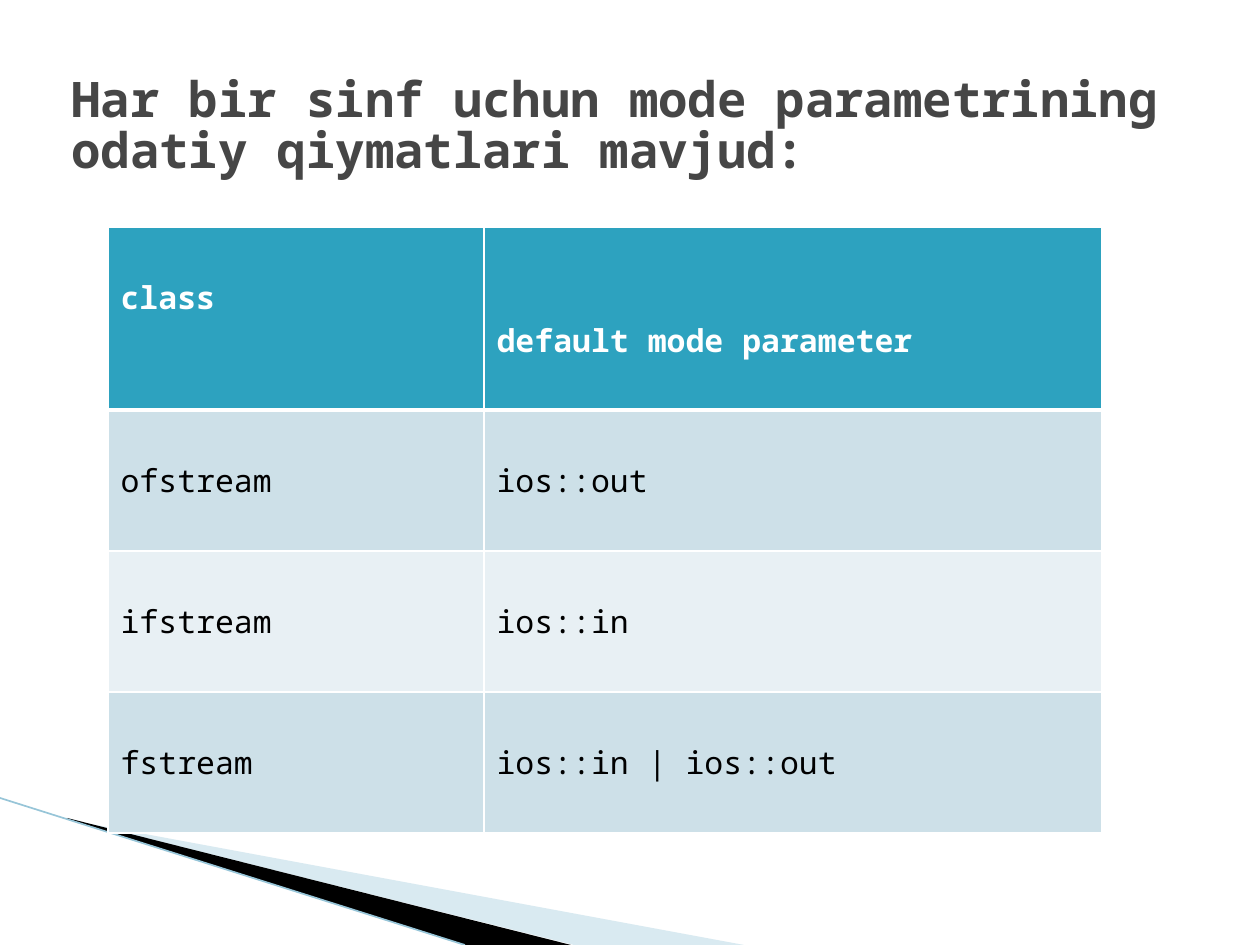
from lxml import etree
from pptx import Presentation
from pptx import util as u
from pptx.dml.color import RGBColor
from pptx.enum import shapes, text
from pptx.oxml import ns

FONT = "Noto Sans Mono"
SCALE = 914400 / 126
ROWS = [
    ("class", "default mode parameter"),
    ("ofstream", "ios::out"),
    ("ifstream", "ios::in"),
    ("fstream", "ios::in | ios::out"),
]


def px(length):
    return u.Emu(round(length * SCALE))


def color(value):
    return RGBColor.from_string(value)


def add_run(paragraph, words, size, fill, bold):
    run = paragraph.add_run()
    run.text = words
    run.font.name = FONT
    run.font.size = u.Pt(size)
    run.font.bold = bold
    run.font.color.rgb = color(fill)


def add_wedge(slide, left, top, points, fill, opacity=100):
    corners = [(px(left + x), px(top + y)) for x, y in points]
    builder = slide.shapes.build_freeform(*corners[0], scale=1.0)
    builder.add_line_segments(corners[1:], close=True)
    wedge = builder.convert_to_shape()
    wedge.shadow.inherit = False
    wedge.line.fill.background()
    wedge.fill.solid()
    wedge.fill.fore_color.rgb = color(fill)
    if opacity < 100:
        tone = wedge.fill._xPr.find(ns.qn("a:solidFill"))[0]
        etree.SubElement(tone, ns.qn("a:alpha"), val=str(opacity * 1000))


def add_corner(slide, left, top, width, height):
    add_wedge(slide, left, top, [(69, 22), (width, height), (574, height), (69, 21)], "A0CBDC", 40)
    add_wedge(slide, left, top, [(67, 20), (571, height), (465, height), (68, 21)], "000000")
    edge = slide.shapes.add_connector(
        shapes.MSO_CONNECTOR.STRAIGHT, px(left), px(top), px(left + 465), px(top + height)
    )
    edge.line.color.rgb = color("97C5D8")
    edge.line.width = u.Pt(0.95)
    etree.SubElement(edge._element.spPr, ns.qn("a:effectLst"))


def add_title(slide, left, top, width, height):
    title = slide.shapes.title
    title.left, title.top, title.width, title.height = map(px, (left, top, width, height))
    frame = title.text_frame
    frame.word_wrap = True
    frame.auto_size = text.MSO_AUTO_SIZE.NONE
    frame.vertical_anchor = text.MSO_ANCHOR.MIDDLE
    paragraph = frame.paragraphs[0]
    paragraph.alignment = text.PP_ALIGN.LEFT
    paragraph.line_spacing = 0.87
    add_run(paragraph, "Har bir sinf uchun mode parametrining odatiy qiymatlari mavjud:", 28, "464646", True)


def set_borders(cell, bottom):
    properties = cell._tc.get_or_add_tcPr()
    for index, (side, points) in enumerate((("L", 1), ("R", 1), ("T", 1), ("B", bottom))):
        border = etree.Element(ns.qn(f"a:ln{side}"), w=str(u.Pt(points)))
        fill = etree.SubElement(border, ns.qn("a:solidFill"))
        etree.SubElement(fill, ns.qn("a:srgbClr"), val="FFFFFF")
        properties.insert(index, border)


def add_modes_table(slide, left, top, width, height):
    first_column, header_height = 376, 183
    row_height = (height - header_height) // (len(ROWS) - 1)
    frame = slide.shapes.add_table(len(ROWS), 2, px(left), px(top), px(width), px(height))
    table = frame.table
    table.columns[0].width = px(first_column)
    table.columns[1].width = px(width - first_column)
    for row, values in enumerate(ROWS):
        header = row == 0
        table.rows[row].height = px(header_height if header else row_height)
        fill = "2DA2BF" if header else ("E8F0F4", "CDE0E8")[row % 2]
        for column, words in enumerate(values):
            cell = table.cell(row, column)
            cell.fill.solid()
            cell.fill.fore_color.rgb = color(fill)
            cell.vertical_anchor = text.MSO_ANCHOR.TOP
            cell.margin_top = px(92 if header and column else 49)
            paragraph = cell.text_frame.paragraphs[0]
            add_run(paragraph, words, 18, "FFFFFF" if header else "000000", header)
            set_borders(cell, 3 if header else 1)


def main():
    presentation = Presentation()
    presentation.slide_width = px(1260)
    presentation.slide_height = px(945)
    slide = presentation.slides.add_slide(presentation.slide_layouts[5])
    slide.background.fill.solid()
    slide.background.fill.fore_color.rgb = color("FFFFFF")
    add_corner(slide, 0, 798, 744, 147)
    add_modes_table(slide, 108, 227, 994, 606)
    add_title(slide, 59, 49, 1134, 158)
    presentation.save("out.pptx")


if __name__ == "__main__":
    main()
